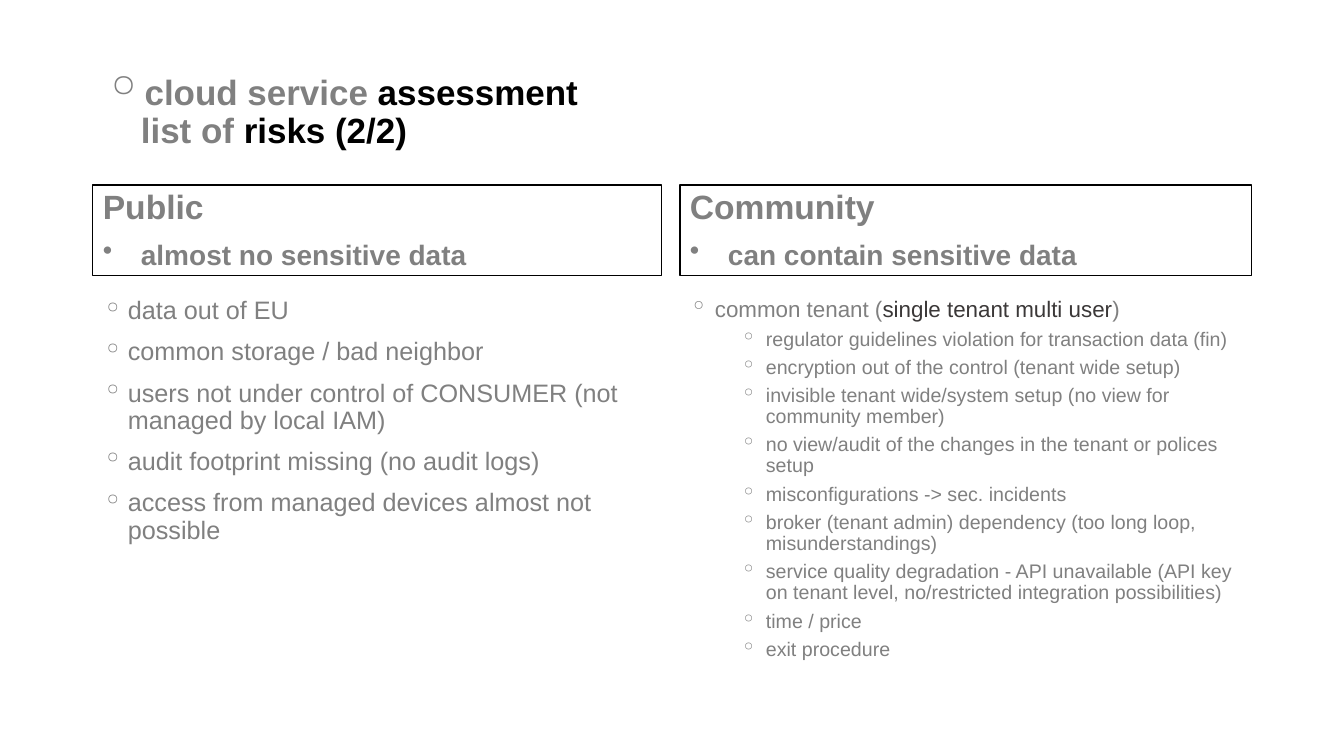
import pptx
import pptx.dml.color
import pptx.enum.shapes
import pptx.enum.text
import pptx.util
from dataclasses import dataclass
from lxml import etree

EMU_PER_PX = 914400 / 100.8
ANCHOR = pptx.enum.text.MSO_ANCHOR


@dataclass(frozen=True)
class Theme:
    font: str = "Arial"
    grey: str = "808080"
    black: str = "000000"
    dark: str = "3B3838"
    title: int = 25
    heading: int = 24
    subheading: int = 20
    risk: int = 18
    tenant: int = 16
    detail: int = 14


def px(length):
    return pptx.util.Emu(round(length * EMU_PER_PX))


def rgb(value):
    return pptx.dml.color.RGBColor.from_string(value)


def add_bullet(paragraph, symbol, left, hanging, percent):
    properties = paragraph._p.get_or_add_pPr()
    properties.set("marL", str(px(left)))
    properties.set("indent", str(-px(hanging)))
    namespace = "{http://schemas.openxmlformats.org/drawingml/2006/main}"
    if percent != 100:
        etree.SubElement(properties, namespace + "buSzPct", val=str(percent * 1000))
    etree.SubElement(properties, namespace + "buChar", char=symbol)


class RiskSlide:
    def __init__(self, deck, theme):
        self.theme = theme
        self.slide = deck.slides.add_slide(deck.slide_layouts[6])

    def text_box(self, left, top, width, height, anchor=ANCHOR.TOP):
        box = self.slide.shapes.add_textbox(px(left), px(top), px(width), px(height))
        return self.prepare(box, anchor)

    def outlined_box(self, left, top, width, height):
        rectangle = pptx.enum.shapes.MSO_SHAPE.RECTANGLE
        box = self.slide.shapes.add_shape(rectangle, px(left), px(top), px(width), px(height))
        box.shadow.inherit = False
        box.fill.background()
        box.line.color.rgb = rgb(self.theme.black)
        box.line.width = pptx.util.Pt(0.75)
        return self.prepare(box, ANCHOR.BOTTOM)

    def prepare(self, box, anchor):
        frame = box.text_frame
        frame.word_wrap = True
        frame.vertical_anchor = anchor
        return frame

    def add_text(self, frame, text, *, size, bold=False, bullet=None, left=25,
                 hanging=25, bullet_percent=100, before=10, level=0):
        """Add a paragraph; text is a string or a list of (string, colour) pieces."""
        first = not frame.paragraphs[0].runs
        paragraph = frame.paragraphs[0] if first else frame.add_paragraph()
        paragraph.alignment = pptx.enum.text.PP_ALIGN.LEFT
        paragraph.level = level
        paragraph.line_spacing = 0.9
        paragraph.space_before = pptx.util.Pt(0 if first else before)
        if bullet:
            add_bullet(paragraph, bullet, left, hanging, bullet_percent)
        pieces = [(text, self.theme.grey)] if isinstance(text, str) else text
        for words, colour in pieces:
            if words == "\n":
                paragraph.add_line_break()
                continue
            run = paragraph.add_run()
            run.text = words
            run.font.name = self.theme.font
            run.font.size = pptx.util.Pt(size)
            run.font.bold = bold
            run.font.color.rgb = rgb(colour)

    def heading(self, left, width, audience, sensitivity):
        frame = self.outlined_box(left, 185, width, 91)
        self.add_text(frame, audience, size=self.theme.heading, bold=True)
        self.add_text(frame, sensitivity, size=self.theme.subheading, bold=True,
                      bullet="•", left=38, hanging=38)


PUBLIC_RISKS = [
    "data out of EU",
    "common storage / bad neighbor",
    "users not under control of CONSUMER (not managed by local IAM)",
    "audit footprint missing (no audit logs)",
    "access from managed devices almost not possible",
]
TENANT_RISKS = [
    "regulator guidelines violation for transaction data (fin)",
    "encryption out of the control (tenant wide setup)",
    "invisible tenant wide/system setup (no view for community member)",
    "no view/audit of the changes in the tenant or polices setup",
    "misconfigurations -> sec. incidents",
    "broker (tenant admin) dependency (too long loop, misunderstandings)",
    "service quality degradation - API unavailable (API key on tenant level, "
    "no/restricted integration possibilities)",
    "time / price",
    "exit procedure",
]


def main():
    deck = pptx.Presentation()
    deck.slide_width, deck.slide_height = px(1344), px(756)
    theme = Theme()
    page = RiskSlide(deck, theme)

    title = page.text_box(93, 40, 1159, 146, ANCHOR.MIDDLE)
    page.add_text(title, [("cloud service ", theme.grey), ("assessment", theme.black),
                          ("\n", theme.black),
                          ("list of ", theme.grey), ("risks (2/2)", theme.black)],
                  size=theme.title, bold=True, bullet="◦", left=38, hanging=38,
                  bullet_percent=150)

    public_left, public_width = 93, 569
    page.heading(public_left, public_width, "Public", "almost no sensitive data")
    public = page.text_box(public_left, 293, public_width, 406)
    for risk in PUBLIC_RISKS:
        page.add_text(public, risk, size=theme.risk, bullet="◦")

    community_left, community_width = 680, 572
    page.heading(community_left, community_width, "Community", "can contain sensitive data")
    community = page.text_box(community_left, 293, community_width, 406)
    page.add_text(community, [("common tenant (", theme.grey),
                              ("single tenant multi user", theme.dark), (")", theme.grey)],
                  size=theme.tenant, bullet="◦")
    for risk in TENANT_RISKS:
        page.add_text(community, risk, size=theme.detail, bullet="◦", left=76,
                      before=5, level=1)

    deck.save("out.pptx")


if __name__ == "__main__":
    main()
